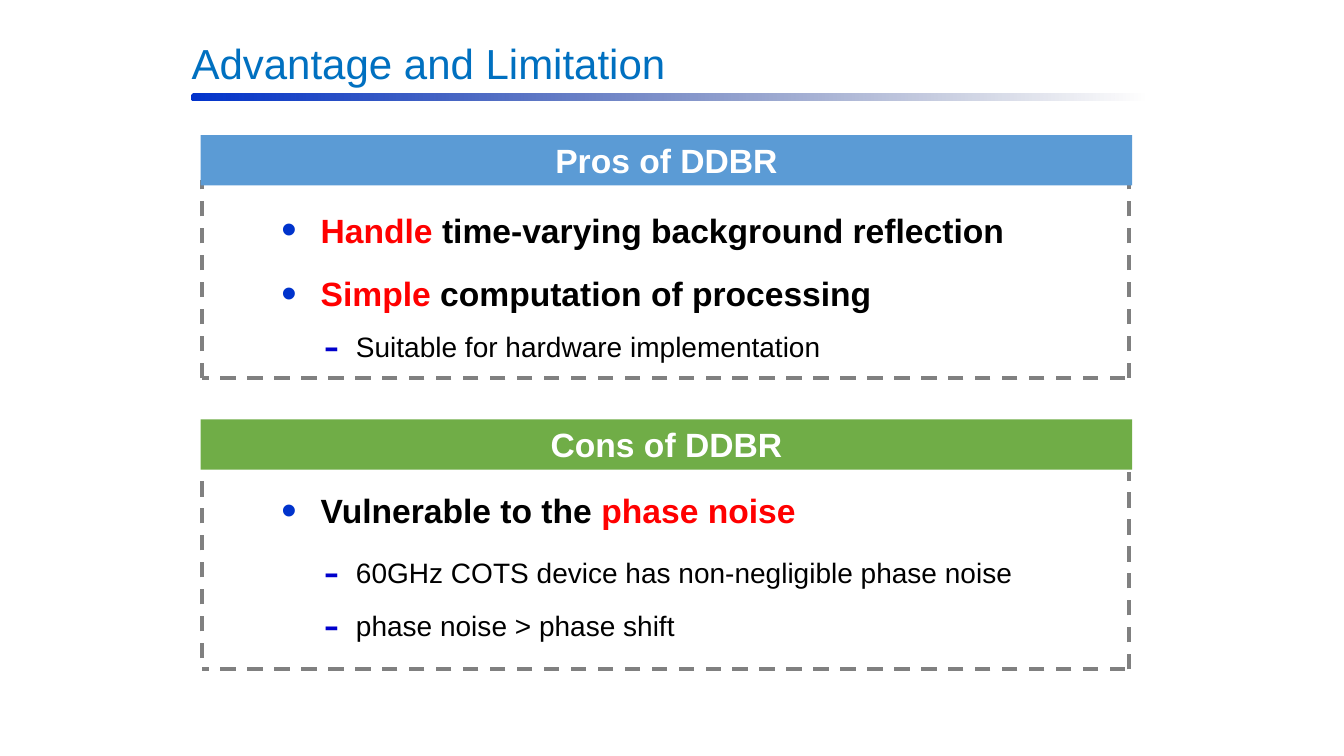
from dataclasses import dataclass

import lxml.etree
import pptx
import pptx.util
import pptx.dml.color
import pptx.enum.dml
import pptx.enum.shapes
import pptx.enum.text
import pptx.oxml.ns

Inches = pptx.util.Inches
Pt = pptx.util.Pt
qn = pptx.oxml.ns.qn
ALIGN = pptx.enum.text.PP_ALIGN
ANCHOR = pptx.enum.text.MSO_ANCHOR
SHAPE = pptx.enum.shapes.MSO_SHAPE


@dataclass(frozen=True)
class Theme:
    font: str = "Arial"
    title: str = "0070C0"
    rule_start: str = "0033CC"
    rule_end: str = "00185E"
    pros: str = "5B9BD5"
    cons: str = "70AD47"
    header_text: str = "FFFFFF"
    frame: str = "808080"
    text: str = "000000"
    accent: str = "FF0000"
    bullet: str = "0033CC"
    dash: str = "0000CC"
    title_size: int = 30
    item_size: int = 24
    detail_size: int = 20


@dataclass(frozen=True)
class Level:
    size: int
    bold: bool
    mark: str
    mark_color: str
    mark_percent: int
    margin: float
    hanging: float


THEME = Theme()
ITEM = Level(THEME.item_size, True, "•", THEME.bullet, 130, 0.39, 0.39)
DETAIL = Level(THEME.detail_size, False, "-", THEME.dash, 170, 0.74, 0.32)
HEADER_HEIGHT = 0.5


def rgb(value):
    return pptx.dml.color.RGBColor.from_string(value)


def add_run(paragraph, text, size, color, bold=False):
    run = paragraph.add_run()
    run.text = text
    run.font.name = THEME.font
    run.font.size = Pt(size)
    run.font.bold = bold
    run.font.color.rgb = rgb(color)


def place(shape, left, top, width, height):
    shape.left, shape.top = Inches(left), Inches(top)
    shape.width, shape.height = Inches(width), Inches(height)


def prepare_frame(text_frame, anchor):
    text_frame.word_wrap = True
    text_frame.auto_size = pptx.enum.text.MSO_AUTO_SIZE.NONE
    text_frame.vertical_anchor = anchor


def add_child(parent, tag, **attributes):
    child = lxml.etree.SubElement(parent, qn(tag))
    for name, value in attributes.items():
        child.set(name, str(value))
    return child


def set_bullet(paragraph, level):
    properties = paragraph._p.get_or_add_pPr()
    properties.set("marL", str(Inches(level.margin)))
    properties.set("indent", str(-Inches(level.hanging)))
    add_child(add_child(properties, "a:buClr"), "a:srgbClr", val=level.mark_color)
    add_child(properties, "a:buSzPct", val=level.mark_percent * 1000)
    add_child(properties, "a:buFont", typeface=THEME.font)
    add_child(properties, "a:buChar", char=level.mark)


def add_title(slide, left, top, width, height):
    title = slide.shapes.title
    place(title, left, top, width, height)
    prepare_frame(title.text_frame, ANCHOR.TOP)
    title.text_frame.margin_top = Inches(0.1)
    paragraph = title.text_frame.paragraphs[0]
    paragraph.alignment = ALIGN.LEFT
    add_run(paragraph, "Advantage and Limitation", THEME.title_size, THEME.title)

    # Rule fading out to the right
    rule = slide.shapes.add_shape(
        SHAPE.ROUNDED_RECTANGLE, Inches(left + 0.1), Inches(top + 0.66),
        Inches(9.5), Inches(0.07))
    rule.shadow.inherit = False
    rule.line.fill.background()
    rule.fill.gradient()
    rule.fill.gradient_angle = 0
    start, end = rule.fill.gradient_stops
    start.position, start.color.rgb = 0, rgb(THEME.rule_start)
    end.position, end.color.rgb = 1, rgb(THEME.rule_end)
    last_color = rule._element.spPr.findall(".//" + qn("a:srgbClr"))[-1]
    add_child(last_color, "a:alpha", val=0)


def add_dashed_line(slide, start, end):
    line = slide.shapes.add_connector(
        pptx.enum.shapes.MSO_CONNECTOR.STRAIGHT,
        *(Inches(value) for value in (*start, *end)))
    line.line.color.rgb = rgb(THEME.frame)
    line.line.width = Pt(2.75)
    line.line.dash_style = pptx.enum.dml.MSO_LINE.DASH
    add_child(line._element.spPr, "a:effectLst")


def add_list(placeholder, items, left, top, width, height):
    place(placeholder, left, top, width, height)
    text_frame = placeholder.text_frame
    prepare_frame(text_frame, ANCHOR.TOP)
    text_frame.margin_left = text_frame.margin_top = 0
    text_frame.margin_right = text_frame.margin_bottom = 0
    for index, (level, space, runs) in enumerate(items):
        paragraph = text_frame.add_paragraph() if index else text_frame.paragraphs[0]
        paragraph.level = 0 if level is ITEM else 1
        paragraph.alignment = ALIGN.LEFT
        paragraph.space_before = Pt(space)
        set_bullet(paragraph, level)
        for text, color in runs:
            add_run(paragraph, text, level.size, color, level.bold)


def add_panel(slide, placeholder, heading, color, items, box, list_top,
              left_side, right_top):
    left, top, width, height = box
    bottom = top + height
    frame_left, frame_right = left + 0.01, left + width - 0.03

    # Dashed frame, open at the top
    add_dashed_line(slide, (frame_right, bottom), (frame_right, top + right_top))
    add_dashed_line(slide, (frame_right - 0.04, bottom), (frame_left, bottom))
    side_top, side_bottom = left_side
    add_dashed_line(slide, (frame_left, top + side_bottom), (frame_left, top + side_top))

    # Header bar
    header = slide.shapes.add_shape(
        SHAPE.RECTANGLE, Inches(left), Inches(top), Inches(width), Inches(HEADER_HEIGHT))
    header.shadow.inherit = False
    header.fill.solid()
    header.fill.fore_color.rgb = rgb(color)
    header.line.fill.background()
    prepare_frame(header.text_frame, ANCHOR.MIDDLE)
    paragraph = header.text_frame.paragraphs[0]
    paragraph.alignment = ALIGN.CENTER
    add_run(paragraph, heading, THEME.item_size, THEME.header_text, True)

    # Bulleted list
    add_list(placeholder, items, left + 0.8, top + list_top,
             width - 1, height - list_top - 0.1)


def main():
    presentation = pptx.Presentation()
    presentation.slide_width = Inches(13.33)
    presentation.slide_height = Inches(7.5)
    slide = presentation.slides.add_slide(
        presentation.slide_layouts.get_by_name("Two Content"))
    pros_list, cons_list = list(slide.placeholders)[1:3]

    add_title(slide, 1.8, 0.27, 9.33, 0.61)
    add_panel(slide, pros_list, "Pros of DDBR", THEME.pros, [
        (ITEM, 0, [("Handle", THEME.accent),
                   (" time-varying background reflection", THEME.text)]),
        (ITEM, 16.3, [("Simple", THEME.accent),
                      (" computation of processing", THEME.text)]),
        (DETAIL, 11.4, [("Suitable for hardware implementation", THEME.text)]),
    ], (1.99, 1.34, 9.24, 2.41), 0.74, (0.45, 2.41), 0.42)
    add_panel(slide, cons_list, "Cons of DDBR", THEME.cons, [
        (ITEM, 0, [("Vulnerable to the ", THEME.text), ("phase noise", THEME.accent)]),
        (DETAIL, 17.9, [("60GHz COTS device has non-negligible phase noise", THEME.text)]),
        (DETAIL, 14.2, [("phase noise > phase shift", THEME.text)]),
    ], (1.99, 4.16, 9.24, 2.48), 0.7, (0.52, 2.37), 0.52)

    presentation.save("out.pptx")


if __name__ == "__main__":
    main()
